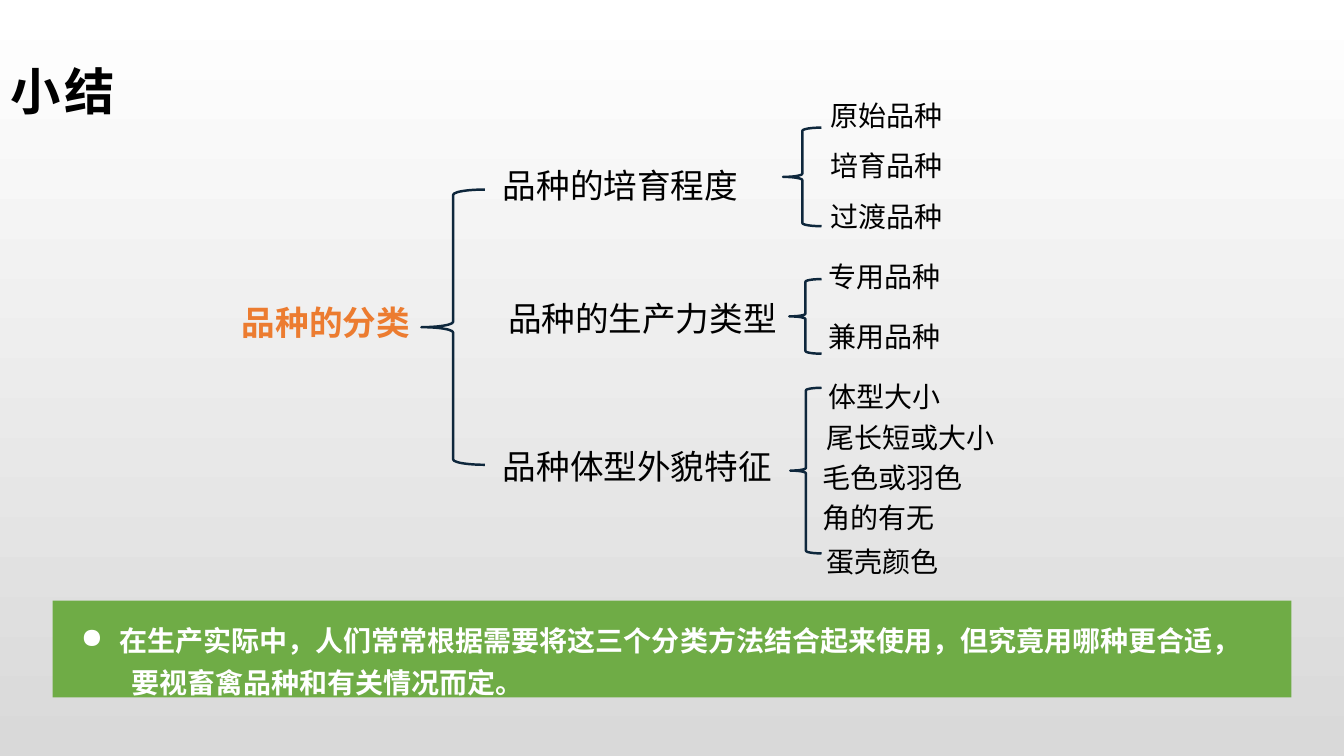
import pptx
import pptx.util
import pptx.dml.color
import pptx.enum.shapes
import pptx.enum.text
import pptx.oxml.ns
import lxml.etree
from dataclasses import dataclass

Pt = pptx.util.Pt
qn = pptx.oxml.ns.qn
ANCHOR = pptx.enum.text.MSO_ANCHOR
SHAPE = pptx.enum.shapes.MSO_SHAPE


@dataclass
class Theme:
    font: str = "Noto Sans CJK SC"
    text: str = "000000"
    accent: str = "EC7C30"
    brace: str = "0E273C"
    bar: str = "6FAC46"
    on_bar: str = "FFFFFF"
    back_top: str = "FFFFFF"
    back_bottom: str = "D9D9D9"
    title_size: int = 36
    label_size: int = 24
    item_size: int = 20
    brace_width: float = 1.75


def rgb(value):
    return pptx.dml.color.RGBColor.from_string(value)


class SlideBuilder:
    def __init__(self, prs, theme):
        self.theme = theme
        self.s = prs.slides.add_slide(prs.slide_layouts[5])

    def background(self):
        fill = self.s.background.fill
        fill.gradient()
        fill.gradient_angle = 270
        colors = (self.theme.back_top, self.theme.back_bottom)
        for position, (stop, color) in enumerate(zip(fill.gradient_stops, colors)):
            stop.position = position
            stop.color.rgb = rgb(color)

    def frame(self, sp, inset_x=0, inset_top=0, anchor=ANCHOR.TOP):
        tf = sp.text_frame
        tf.word_wrap = True
        tf.auto_size = pptx.enum.text.MSO_AUTO_SIZE.NONE
        tf.vertical_anchor = anchor
        tf.margin_left = tf.margin_right = Pt(inset_x)
        tf.margin_top, tf.margin_bottom = Pt(inset_top), 0
        return tf

    def paragraph(self, p, text, size, leading, color=None, bold=False,
                  before=0, left=0, hang=0, bullet=None, tracking=0):
        p.text = text
        p.alignment = pptx.enum.text.PP_ALIGN.LEFT
        p.line_spacing, p.space_before = Pt(leading), Pt(before)
        p.font.size, p.font.bold = Pt(size), bold
        p.font.color.rgb = rgb(color or self.theme.text)
        p.font.name = self.theme.font
        # East Asian font, indents, tracking and bullet
        pPr = p._p.get_or_add_pPr()
        pPr.set("marL", str(Pt(left)))
        pPr.set("indent", str(Pt(hang)))
        defaults = pPr.find(qn("a:defRPr"))
        lxml.etree.SubElement(defaults, qn("a:ea"), typeface=self.theme.font)
        if tracking:
            defaults.set("spc", str(tracking * 100))
        if bullet:
            defaults.addprevious(defaults.makeelement(qn("a:buChar"), {"char": bullet}))

    def title(self, text, x, y, w, h):
        sp = self.s.shapes.title
        sp.left, sp.top, sp.width, sp.height = map(Pt, (x, y, w, h))
        tf = self.frame(sp, inset_x=7.2, anchor=ANCHOR.MIDDLE)
        self.paragraph(tf.paragraphs[0], text, self.theme.title_size, 45,
                       bold=True, tracking=3)

    def label(self, text, x, y, w, color=None, bold=False):
        sp = self.s.shapes.add_textbox(Pt(x), Pt(y), Pt(w), Pt(30))
        self.paragraph(self.frame(sp).paragraphs[0], text,
                       self.theme.label_size, 30, color, bold)

    def brace(self, x, y, w, h):
        sp = self.s.shapes.add_shape(SHAPE.LEFT_BRACE, Pt(x), Pt(y), Pt(w), Pt(h))
        sp.shadow.inherit = False
        sp.fill.background()
        sp.line.color.rgb = rgb(self.theme.brace)
        sp.line.width = Pt(self.theme.brace_width)

    def fill_rows(self, tf, rows, **style):
        for i, (text, layout) in enumerate(rows):
            p = tf.add_paragraph() if i else tf.paragraphs[0]
            self.paragraph(p, text, self.theme.item_size, **layout, **style)

    def leaves(self, rows, x, y, w, h):
        sp = self.s.shapes.add_textbox(Pt(x), Pt(y), Pt(w), Pt(h))
        self.fill_rows(self.frame(sp), rows)

    def bar(self, rows, x, y, w, h):
        sp = self.s.shapes.add_shape(SHAPE.RECTANGLE, Pt(x), Pt(y), Pt(w), Pt(h))
        sp.shadow.inherit = False
        sp.fill.solid()
        sp.fill.fore_color.rgb = rgb(self.theme.bar)
        sp.line.fill.background()
        self.fill_rows(self.frame(sp, inset_top=9.5), rows,
                       color=self.theme.on_bar, bold=True)


def main():
    prs = pptx.Presentation()
    prs.slide_width, prs.slide_height = Pt(960), Pt(540)
    theme = Theme()
    page = SlideBuilder(prs, theme)
    page.background()
    page.title("小结", 0, 36, 864, 55.4)

    # Root and its three branches
    page.label("品种的分类", 172.8, 214.6, 122, theme.accent, True)
    for text, x, y in (("品种的培育程度", 359.3, 116.7),
                       ("品种的生产力类型", 362.9, 211.7),
                       ("品种体型外貌特征", 359.3, 317.4)):
        page.label(text, x, y, 196)

    # Braces: root, then one for each branch
    for box in ((301, 135.4, 45.4, 196.6), (559.4, 91.2, 27.4, 70.4),
                (563.8, 199.4, 23, 53.3), (564.5, 277, 22.3, 118.3)):
        page.brace(*box)

    # Leaves
    breeding = dict(leading=35, before=1.2, left=6.5)
    use = dict(leading=35, before=7.8, left=5)
    looks = dict(leading=28.5, before=0.8, left=0.7, hang=3)
    page.leaves([
        ("原始品种", {**breeding, "before": 0}),
        ("培育品种", breeding),
        ("过渡品种", breeding),
        ("专用品种", use),
        ("兼用品种", use),
        ("体型大小", use),
        ("尾长短或大小\v毛色或羽色\v角的有无", looks),
        ("蛋壳颜色", dict(leading=24, before=7.5, left=3.6)),
    ], 586.8, 59.1, 126, 358)

    # Closing remark
    page.bar([
        ("在生产实际中，人们常常根据需要将这三个分类方法结合起来使用，但究竟用哪种更合适，",
         dict(leading=30.5, left=47.5, hang=-27.4, bullet="●")),
        ("要视畜禽品种和有关情况而定。", dict(leading=30.5, left=56)),
    ], 37.6, 429.1, 884.9, 69.1)

    prs.save("out.pptx")


if __name__ == "__main__":
    main()
